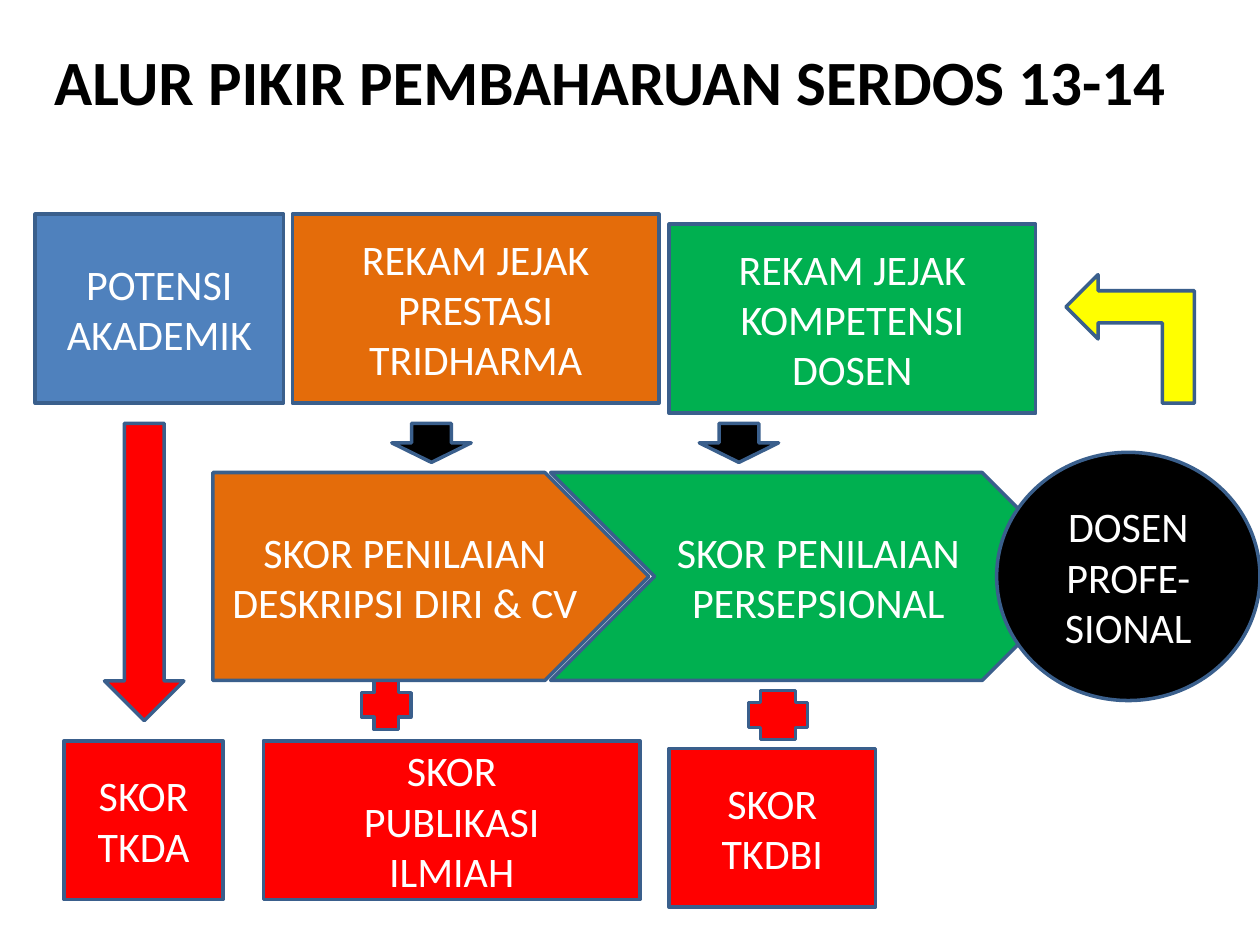
from typing import NamedTuple

from pptx import Presentation
from pptx.dml.color import RGBColor
from pptx.enum import shapes, text
from pptx.util import Inches, Pt

BLACK = RGBColor(0x00, 0x00, 0x00)
WHITE = RGBColor(0xFF, 0xFF, 0xFF)
RED = RGBColor(0xFF, 0x00, 0x00)
GREEN = RGBColor(0x00, 0xB0, 0x50)
ORANGE = RGBColor(0xE4, 0x6C, 0x0A)
BLUE = RGBColor(0x4F, 0x81, 0xBD)
YELLOW = RGBColor(0xFF, 0xFF, 0x00)
OUTLINE = RGBColor(0x3A, 0x5F, 0x8C)

FONT = "Calibri"
KIND = shapes.MSO_SHAPE

RECORD_TOP, RECORD_H = 1.7, 1.5
ARROW_TOP, ARROW_W, ARROW_H = 3.36, 0.63, 0.31
STAGE_TOP, STAGE_H = 3.75, 1.65
SCORE_TOP, SCORE_H = 5.88, 1.26


class Block(NamedTuple):
    kind: shapes.MSO_SHAPE
    left: float
    top: float
    width: float
    height: float
    fill: RGBColor
    label: str = ""
    rotation: float = 0


# Listed from back to front
BLOCKS = [
    Block(KIND.PARALLELOGRAM, 5.31, RECORD_TOP + 0.08, 2.91, RECORD_H, GREEN,
          "REKAM JEJAK KOMPETENSI DOSEN"),
    Block(KIND.CHEVRON, 4.37, STAGE_TOP, 4.25, STAGE_H, GREEN,
          "SKOR PENILAIAN PERSEPSIONAL"),
    Block(KIND.OVAL, 7.91, 3.59, 2.09, 1.97, BLACK, "DOSEN PROFE-SIONAL"),
    Block(KIND.PARALLELOGRAM, 5.31, SCORE_TOP + 0.06, 1.64, SCORE_H, RED,
          "SKOR\vTKDBI"),
    Block(KIND.PARALLELOGRAM, 2.32, RECORD_TOP, 2.91, RECORD_H, ORANGE,
          "REKAM JEJAK PRESTASI TRIDHARMA"),
    Block(KIND.PARALLELOGRAM, 2.09, SCORE_TOP, 2.99, SCORE_H, RED,
          "SKOR\vPUBLIKASI\vILMIAH"),
    Block(KIND.DOWN_ARROW, 3.11, ARROW_TOP, ARROW_W, ARROW_H, BLACK),
    Block(KIND.DOWN_ARROW, 0.83, ARROW_TOP, ARROW_W, 2.36, RED),
    Block(KIND.DOWN_ARROW, 5.55, ARROW_TOP, ARROW_W, ARROW_H, BLACK),
    Block(KIND.RECTANGLE, 0.51, SCORE_TOP, 1.26, SCORE_H, RED, "SKOR TKDA"),
    Block(KIND.CROSS, 2.87, 5.4, 0.39, 0.39, RED),
    Block(KIND.CROSS, 5.94, 5.48, 0.47, 0.39, RED),
    Block(KIND.BENT_UP_ARROW, 8.46, 2.18, 1.02, 1.02, YELLOW, rotation=270),
    Block(KIND.RECTANGLE, 0.28, RECORD_TOP, 1.97, RECORD_H, BLUE,
          "POTENSI AKADEMIK"),
    Block(KIND.PENTAGON, 1.69, STAGE_TOP, 3.46, STAGE_H, ORANGE,
          "SKOR PENILAIAN DESKRIPSI DIRI & CV"),
]


def write(s, label: str, size: float, color: RGBColor, bold: bool = False) -> None:
    """Put one centred paragraph into a shape or text box."""
    tf = s.text_frame
    tf.word_wrap = True
    tf.vertical_anchor = text.MSO_ANCHOR.MIDDLE
    p = tf.paragraphs[0]
    p.text = label
    p.alignment = text.PP_ALIGN.CENTER
    p.font.name = FONT
    p.font.size = Pt(size)
    p.font.bold = bold
    p.font.color.rgb = color


def add_title(slide, title: str) -> None:
    box = slide.shapes.add_textbox(Inches(0.28), Inches(0.01), Inches(9.24), Inches(1.25))
    write(box, title, 36, BLACK, bold=True)


def add_block(slide, block: Block) -> None:
    s = slide.shapes.add_shape(block.kind, Inches(block.left), Inches(block.top),
                               Inches(block.width), Inches(block.height))
    if block.kind == KIND.PARALLELOGRAM:
        s.adjustments[0] = 0
    s.rotation = block.rotation
    s.shadow.inherit = False
    s.fill.solid()
    s.fill.fore_color.rgb = block.fill
    s.line.color.rgb = OUTLINE
    s.line.width = Pt(2)
    if block.label:
        write(s, block.label, 24, WHITE)


def main() -> None:
    prs = Presentation()
    prs.slide_width, prs.slide_height = Inches(10), Inches(7.5)
    slide = prs.slides.add_slide(prs.slide_layouts[6])
    add_title(slide, "ALUR PIKIR PEMBAHARUAN SERDOS 13-14 ")
    for block in BLOCKS:
        add_block(slide, block)
    prs.save("out.pptx")


if __name__ == "__main__":
    main()
